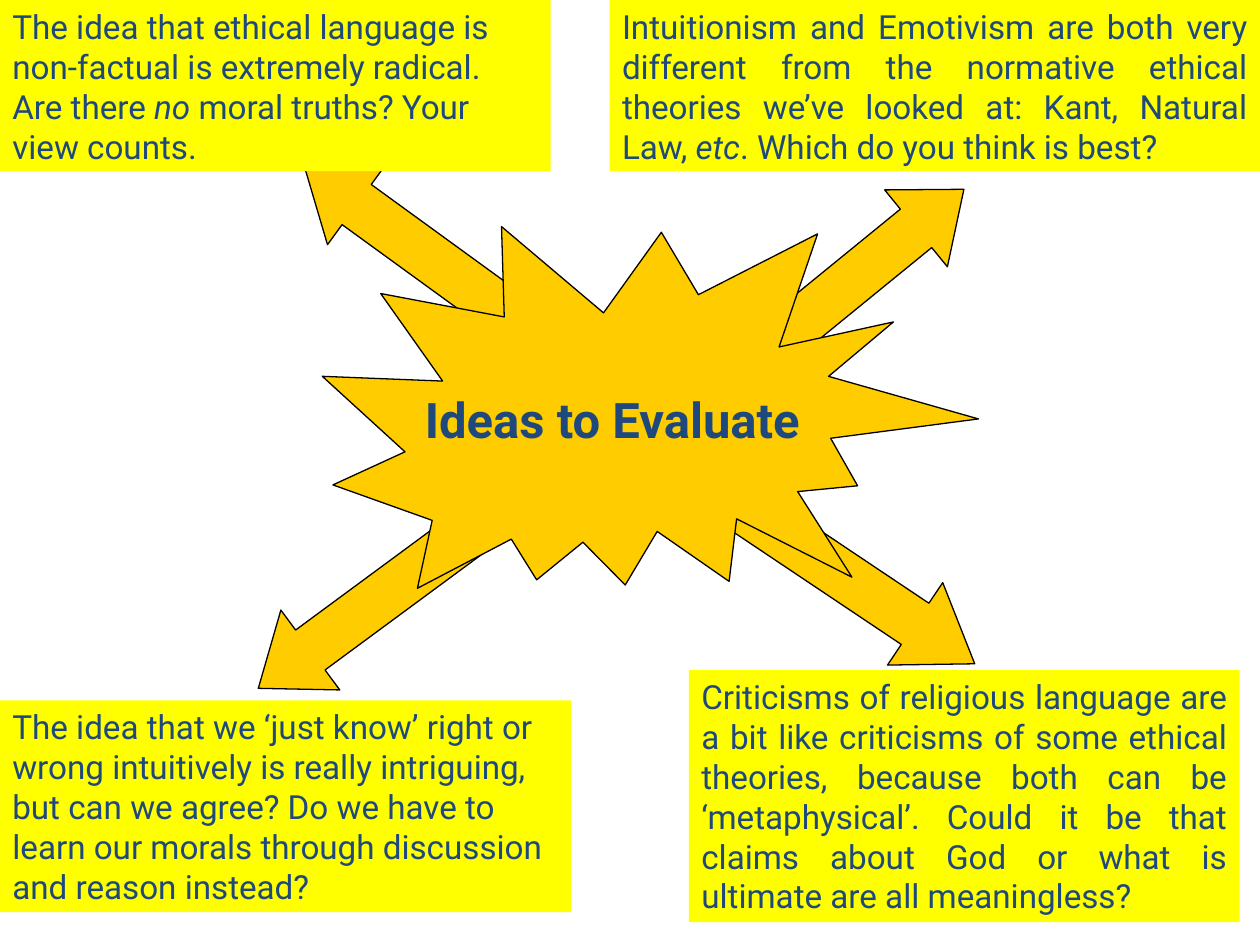
import pptx
import pptx.util
import pptx.dml.color
import pptx.enum.shapes
import pptx.enum.text

Cm, Pt = pptx.util.Cm, pptx.util.Pt
RGBColor = pptx.dml.color.RGBColor
Shape = pptx.enum.shapes.MSO_SHAPE
Align = pptx.enum.text.PP_ALIGN

GOLD = RGBColor(0xFF, 0xCC, 0x00)
YELLOW = RGBColor(0xFF, 0xFF, 0x00)
NAVY = RGBColor(0x1F, 0x49, 0x7D)
BLACK = RGBColor(0, 0, 0)
FONT = "Roboto"
ARROW_HEIGHT = 2.0

# Arrows: left, top, length in cm, then rotation
ARROWS = [
    (14.35, 10.77, 5.79, 213.8),
    (4.7, 11.33, 5.21, 323.6),
    (15.01, 4.39, 4.98, 140.8),
    (5.64, 3.89, 5.21, 36),
]

# Ideas: box in cm, alignment, text pieces (every second piece is italic)
IDEAS = [
    ((0, 0, 11.1, 3.45), Align.LEFT,
     ["The idea that ethical language is non-factual is extremely radical. "
      "Are there ", "no", " moral truths? Your view counts."]),
    ((12.29, 0, 13.11, 3.45), Align.JUSTIFY,
     ["Intuitionism and Emotivism are both very different from the normative "
      "ethical theories we’ve looked at: Kant, Natural Law, ", "etc",
      ". Which do you think is best?"]),
    ((0, 14.12, 11.51, 4.27), Align.LEFT,
     ["The idea that we ‘just know’ right or wrong intuitively is really "
      "intriguing, but can we agree? Do we have to learn our morals through "
      "discussion and reason instead?"]),
    ((13.89, 13.51, 11.1, 5.08), Align.JUSTIFY,
     ["Criticisms of religious language are a bit like criticisms of some "
      "ethical theories, because both can be ‘metaphysical’. Could it be that "
      "claims about God or what is ultimate are all meaningless?"]),
]


def add_filled(page, kind, box, fill, outlined=True, rotation=0):
    shape = page.shapes.add_shape(kind, *map(Cm, box))
    shape.shadow.inherit = False
    shape.rotation = rotation
    shape.fill.solid()
    shape.fill.fore_color.rgb = fill
    if outlined:
        shape.line.color.rgb = BLACK
        shape.line.width = Pt(0.75)
    else:
        shape.line.fill.background()
    return shape


def format_frame(frame, anchor):
    frame.word_wrap = True
    frame.auto_size = pptx.enum.text.MSO_AUTO_SIZE.SHAPE_TO_FIT_TEXT
    frame.vertical_anchor = anchor


def format_para(para, align, size):
    para.alignment = align
    para.line_spacing = 1.0
    para.space_before = Pt(0)
    for span in para.runs:
        span.font.name = FONT
        span.font.size = Pt(size)
        span.font.color.rgb = NAVY


def add_arrow(page, left, top, length, rotation):
    arrow = add_filled(page, Shape.LEFT_ARROW, (left, top, length, ARROW_HEIGHT),
                       GOLD, rotation=rotation)
    # The head takes a quarter of the length
    arrow.adjustments[1] = length / 4 / ARROW_HEIGHT


def add_burst(page, box):
    left, top, width, height = box
    add_filled(page, Shape.EXPLOSION2, box, GOLD, rotation=15)

    # Title, brought in front of the burst
    title = page.shapes.title
    title.left, title.top = Cm(left + 1.81), Cm(top + 3.78)
    title.width, title.height = Cm(8.2), Cm(1.45)
    title.text_frame.text = "Ideas to Evaluate"
    format_frame(title.text_frame, pptx.enum.text.MSO_ANCHOR.TOP)
    para = title.text_frame.paragraphs[0]
    format_para(para, Align.LEFT, 28)
    para.runs[0].font.bold = True
    title.element.getparent().append(title.element)


def add_idea(page, box, align, pieces):
    shape = add_filled(page, Shape.RECTANGLE, box, YELLOW, outlined=False)
    format_frame(shape.text_frame, pptx.enum.text.MSO_ANCHOR.TOP)
    para = shape.text_frame.paragraphs[0]
    for index, piece in enumerate(pieces):
        span = para.add_run()
        span.text = piece
        span.font.italic = index % 2 == 1
    format_para(para, align, 19)


def main():
    deck = pptx.Presentation()
    deck.slide_width, deck.slide_height = Cm(25.4), Cm(19.05)
    page = deck.slides.add_slide(deck.slide_layouts.get_by_name("Title Only"))
    for arrow in ARROWS:
        add_arrow(page, *arrow)
    add_burst(page, (6.5, 3.94, 13.0, 8.99))
    for idea in IDEAS:
        add_idea(page, *idea)
    deck.save("out.pptx")


if __name__ == "__main__":
    main()
